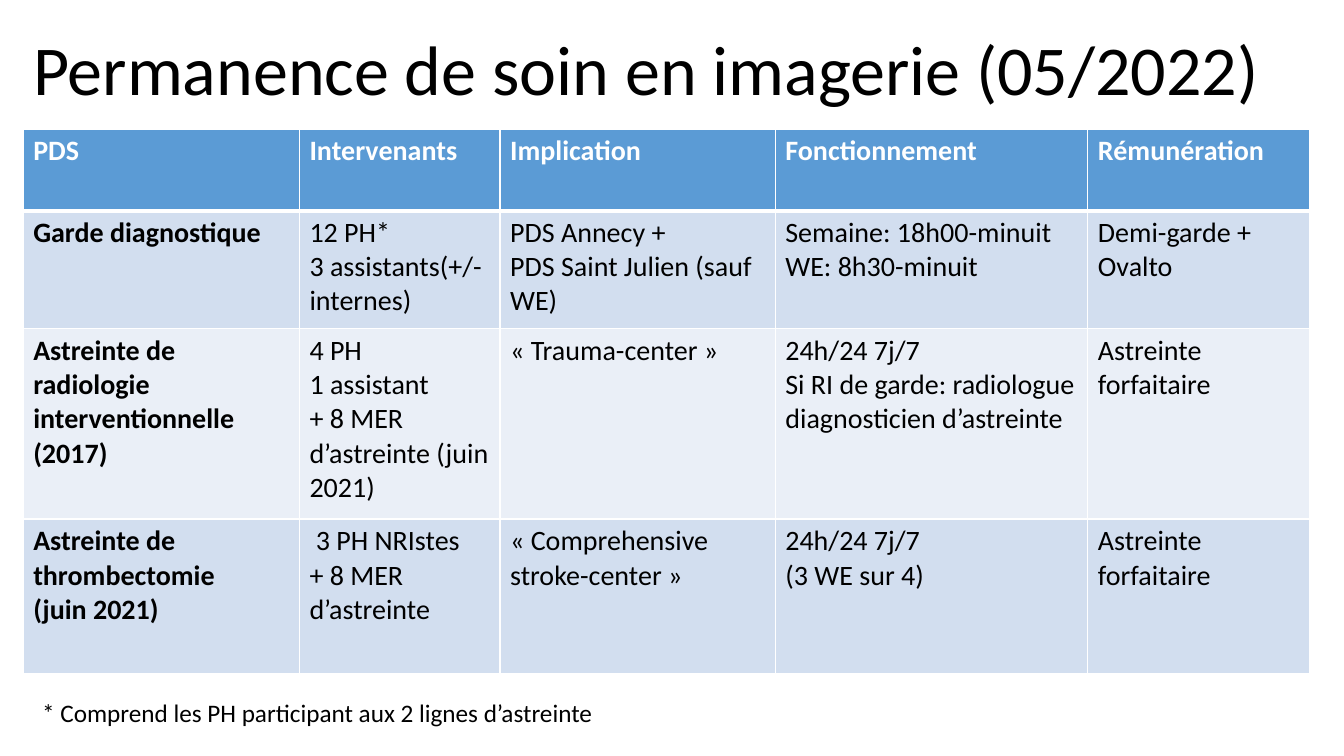
import pptx
import pptx.util
import pptx.dml.color
import pptx.enum.text
import pptx.oxml

WIDE, HIGH = 13.33, 7.5
LEFT, SPAN = 0.23, 12.77
FONT = "Calibri"
HUES = {"text": "000000", "white": "FFFFFF", "head": "5B9BD5",
        "dark": "D2DEEF", "light": "EAEFF7"}
COLS = [2.74, 1.99, 2.73, 3.1, 2.2]
ROWS = [0.81, 1.17, 1.89, 1.53]
CELLS = [
    ["PDS", "Intervenants", "Implication", "Fonctionnement", "Rémunération"],
    ["Garde diagnostique",
     "12 PH*\n3 assistants(+/-internes)",
     "PDS Annecy +\nPDS Saint Julien (sauf WE)",
     "Semaine: 18h00-minuit\nWE: 8h30-minuit",
     "Demi-garde + Ovalto"],
    ["Astreinte de radiologie interventionnelle (2017)",
     "4 PH\n1 assistant\n+ 8 MER d’astreinte (juin 2021)",
     "« Trauma-center »",
     "24h/24 7j/7\nSi RI de garde: radiologue diagnosticien d’astreinte",
     "Astreinte forfaitaire"],
    ["Astreinte de thrombectomie\n(juin 2021)",
     " 3 PH NRIstes\n+ 8 MER d’astreinte",
     "« Comprehensive stroke-center »",
     "24h/24 7j/7\n(3 WE sur 4)",
     "Astreinte forfaitaire"],
]


def inch(size):
    return pptx.util.Inches(size)


def hue(name):
    return pptx.dml.color.RGBColor.from_string(HUES[name])


def write(frame, text, size, tint="text", bold=False):
    frame.text = text
    for para in frame.paragraphs:
        para.font.name = FONT
        para.font.size = pptx.util.Pt(size)
        para.font.bold = bold
        para.font.color.rgb = hue(tint)


def add_text(slide, text, size, box, wrap=True):
    frame = slide.shapes.add_textbox(*map(inch, box)).text_frame
    frame.word_wrap = wrap
    write(frame, text, size)
    return frame


def edge(cell, row):
    """Draw white borders, thicker between the header and the body."""
    props = cell._tc.get_or_add_tcPr()
    for side in "LRTB":
        thick = (row, side) in [(0, "B"), (1, "T")]
        width = pptx.util.Pt(3 if thick else 1)
        props.append(pptx.oxml.parse_xml(
            f'<a:ln{side} xmlns:a="http://schemas.openxmlformats.org/drawingml/2006/main"'
            f' w="{width}"><a:solidFill><a:srgbClr val="{HUES["white"]}"/>'
            f'</a:solidFill></a:ln{side}>'))


def add_grid(slide, top):
    grid = slide.shapes.add_table(
        len(ROWS), len(COLS), inch(LEFT), inch(top),
        inch(sum(COLS)), inch(sum(ROWS))).table
    for col, width in zip(grid.columns, COLS):
        col.width = inch(width)
    for row, high in enumerate(ROWS):
        grid.rows[row].height = inch(high)
        fill = "head" if row == 0 else ("light", "dark")[row % 2]
        tint = "text" if row else "white"
        for col, text in enumerate(CELLS[row]):
            cell = grid.cell(row, col)
            write(cell.text_frame, text, 20, tint, row == 0 or col == 0)
            edge(cell, row)
            cell.fill.solid()
            cell.fill.fore_color.rgb = hue(fill)


def main():
    deck = pptx.Presentation()
    deck.slide_width, deck.slide_height = inch(WIDE), inch(HIGH)
    slide = deck.slides.add_slide(deck.slide_layouts[6])
    title = add_text(slide, "Permanence de soin en imagerie (05/2022)", 50,
                     (LEFT, 0, SPAN, 1.45))
    title.vertical_anchor = pptx.enum.text.MSO_ANCHOR.MIDDLE
    title.paragraphs[0].line_spacing = 0.9
    add_grid(slide, 1.28)
    note = add_text(slide, "* Comprend les PH participant aux 2 lignes d’astreinte",
                    18, (0.32, 6.87, 5.83, 0.4), wrap=False)
    note.auto_size = pptx.enum.text.MSO_AUTO_SIZE.SHAPE_TO_FIT_TEXT
    deck.save("out.pptx")


if __name__ == "__main__":
    main()
